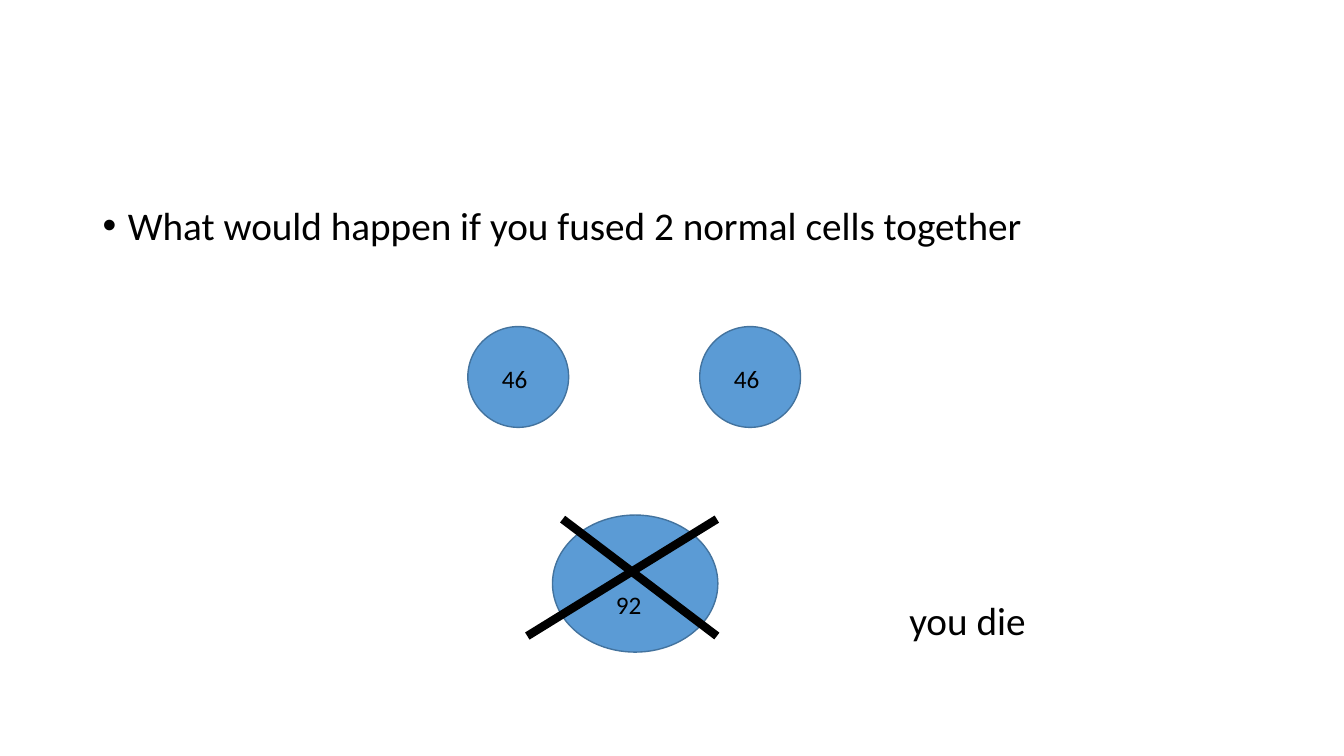
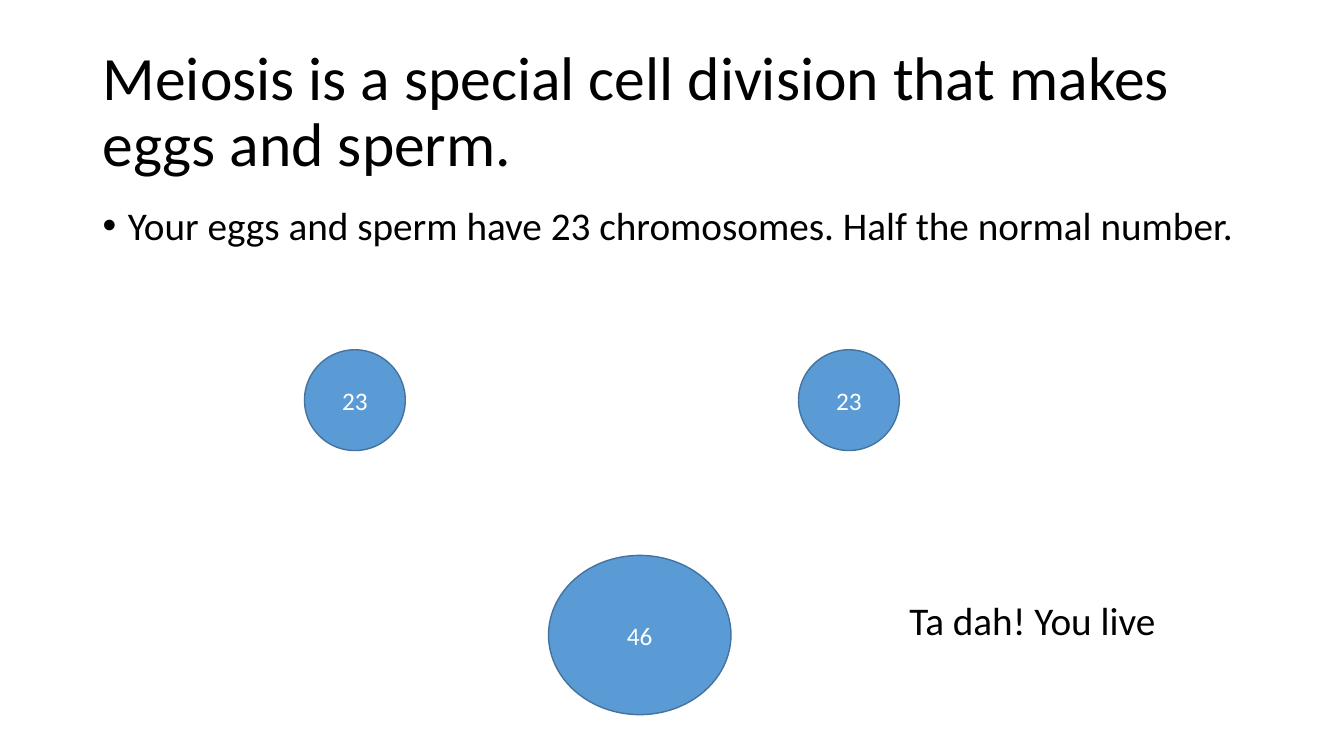
from dataclasses import dataclass

from lxml.etree import SubElement
from pptx import Presentation
from pptx.dml.color import RGBColor as RGB
from pptx.enum.shapes import MSO_CONNECTOR as Connector, MSO_SHAPE as Shape
from pptx.enum.text import MSO_ANCHOR as Anchor, PP_ALIGN as Align
from pptx.oxml.ns import qn
from pptx.util import Pt

PX = 9144  # EMU; 100 px to the inch
WIDTH, HEIGHT = 1333, 750
LEFT, TEXT_WIDTH = 92, 1150
CELL = 100


@dataclass(frozen=True)
class Theme:
    font: str = "Calibri"
    ink: RGB = RGB(0x00, 0x00, 0x00)
    light: RGB = RGB(0xFF, 0xFF, 0xFF)
    cell: RGB = RGB(0x5B, 0x9B, 0xD5)
    membrane: RGB = RGB(0x43, 0x73, 0x9E)
    title: int = 44
    body: int = 28
    label: int = 18
    outline: int = 1
    cross: int = 6


class Deck:
    def __init__(self, theme):
        self.theme = theme
        self.prs = Presentation()
        self.prs.slide_width, self.prs.slide_height = WIDTH * PX, HEIGHT * PX
        self.slide = None

    def new_slide(self):
        self.slide = self.prs.slides.add_slide(self.prs.slide_layouts[6])

    def fill_text(self, frame, words, size, color, spacing=None):
        paragraph = frame.paragraphs[0]
        paragraph.text = words
        paragraph.line_spacing = spacing
        font = paragraph.font
        font.name, font.size, font.color.rgb = self.theme.font, Pt(size), color
        return paragraph

    def text(self, box, words, size, spacing=None, anchor=Anchor.TOP, bullet=None):
        frame = self.slide.shapes.add_textbox(*(n * PX for n in box)).text_frame
        frame.word_wrap = True
        frame.vertical_anchor = anchor
        if bullet:
            properties = frame.paragraphs[0]._p.get_or_add_pPr()
            properties.set("marL", str(25 * PX))
            properties.set("indent", str(-25 * PX))
            SubElement(properties, qn("a:buFont"), typeface="Arial")
            SubElement(properties, qn("a:buChar"), char=bullet)
        self.fill_text(frame, words, size, self.theme.ink, spacing)

    def title(self, words):
        self.text((LEFT, 40, TEXT_WIDTH, 145), words, self.theme.title, 0.9, Anchor.MIDDLE)

    def bullet(self, words):
        self.text((LEFT, 200, TEXT_WIDTH, 60), words, self.theme.body, 0.9, bullet="•")

    def outcome(self, words):
        self.text((892, 592, 350, 60), words, self.theme.body, 0.9)

    def label(self, left, top, count):
        self.text((left, top, 58, 40), count, self.theme.label)

    def cell(self, left, top, width=CELL, height=CELL, count=None):
        """Draw a cell, with its chromosome count centred if given."""
        oval = self.slide.shapes.add_shape(
            Shape.OVAL, left * PX, top * PX, width * PX, height * PX)
        oval.shadow.inherit = False
        oval.fill.solid()
        oval.fill.fore_color.rgb = self.theme.cell
        oval.line.color.rgb = self.theme.membrane
        oval.line.width = Pt(self.theme.outline)
        if count:
            oval.text_frame.vertical_anchor = Anchor.MIDDLE
            paragraph = self.fill_text(
                oval.text_frame, count, self.theme.label, self.theme.light)
            paragraph.alignment = Align.CENTER

    def stroke(self, start, end):
        line = self.slide.shapes.add_connector(
            Connector.STRAIGHT, *(n * PX for n in start + end))
        line.line.color.rgb = self.theme.ink
        line.line.width = Pt(self.theme.cross)
        SubElement(line._element.spPr, qn("a:effectLst"))


def normal_cells(deck):
    deck.new_slide()
    deck.bullet("What would happen if you fused 2 normal cells together")
    for left in (464, 694):
        deck.cell(left, 324)
        deck.label(left + 24, 356, "46")
    deck.cell(548, 511, 164, 136)
    deck.label(601, 580, "92")
    top, bottom = 515, 631
    deck.stroke((558, top), (711, bottom))
    deck.stroke((711, top), (523, bottom))
    deck.outcome("you die")


def meiosis(deck):
    deck.new_slide()
    deck.title("Meiosis is a special cell division that makes eggs and sperm.")
    deck.bullet("Your eggs and sperm have 23 chromosomes. Half the normal number.")
    for left in (302, 792):
        deck.cell(left, 347, count="23")
    deck.cell(544, 551, 181, 158, "46")
    deck.outcome("Ta dah! You live")


def main():
    deck = Deck(Theme())
    normal_cells(deck)
    meiosis(deck)
    deck.prs.save("out.pptx")


if __name__ == "__main__":
    main()
